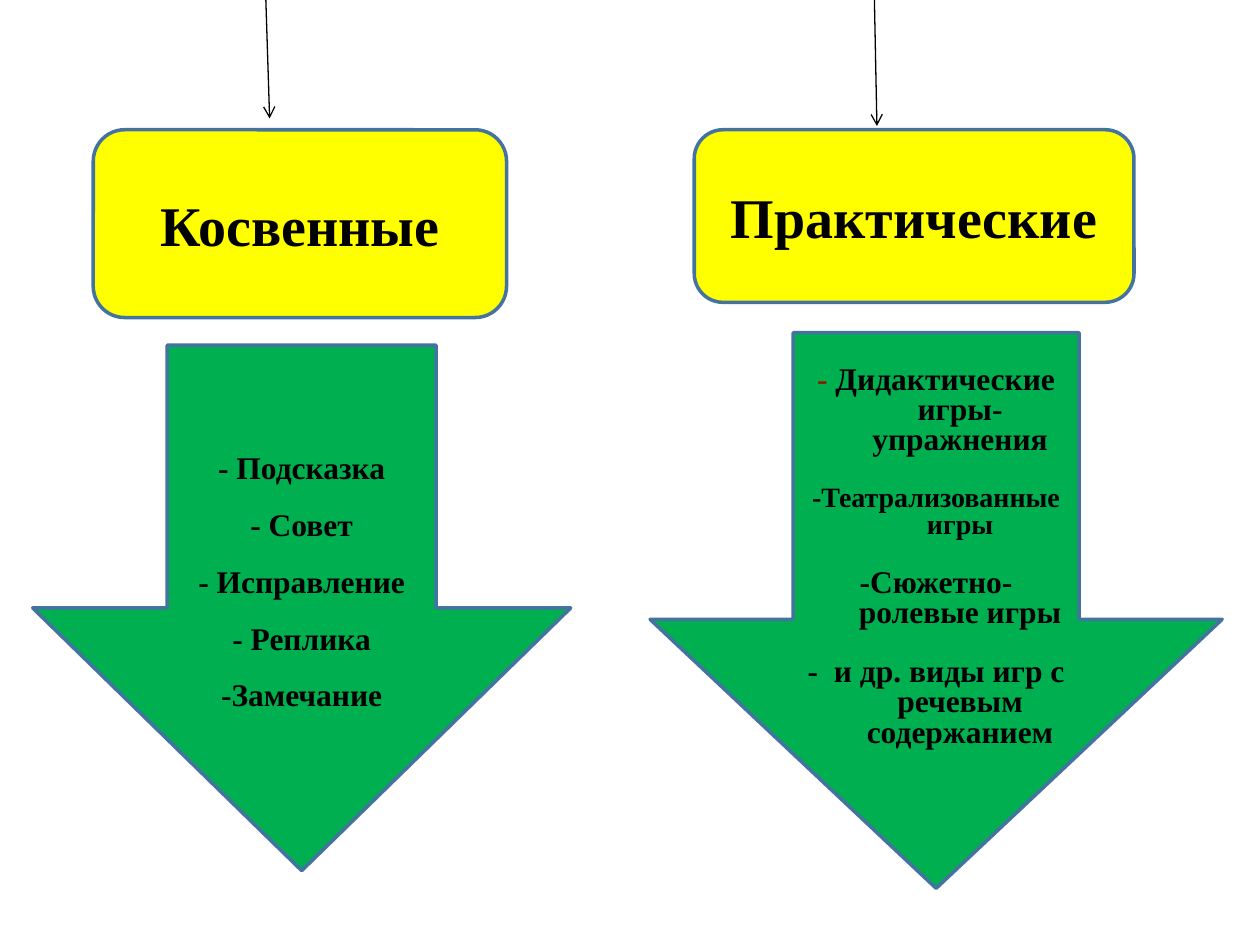
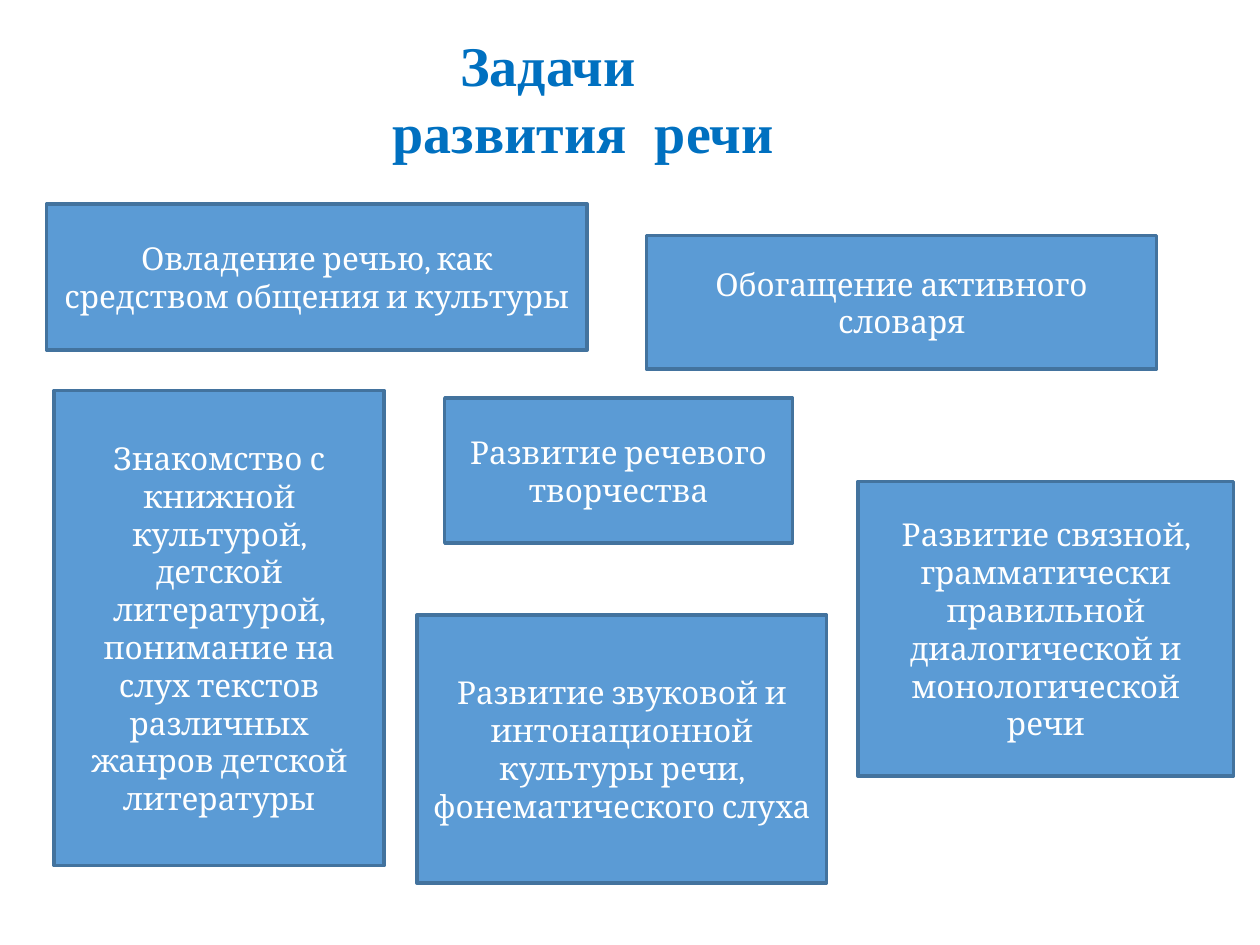
from lxml import etree
from pptx import Presentation
from pptx.dml.color import RGBColor
from pptx.enum.shapes import MSO_CONNECTOR, MSO_SHAPE
from pptx.enum.text import MSO_ANCHOR, PP_ALIGN
from pptx.oxml.ns import qn
from pptx.util import Inches, Pt

RECT = MSO_SHAPE.RECTANGLE
ROUND = MSO_SHAPE.ROUNDED_RECTANGLE
ARROW = MSO_SHAPE.DOWN_ARROW
LINE = MSO_CONNECTOR.STRAIGHT
CENTER = PP_ALIGN.CENTER
MIDDLE, TOP = MSO_ANCHOR.MIDDLE, MSO_ANCHOR.TOP

# Grid: 100 columns by 75 rows on the slide
WIDTH, HEIGHT = Inches(10), Inches(7.5)
COLS, ROWS = 100, 75

# Shared look
TIMES, CAMBRIA = "Times New Roman", "Cambria"
BLACK, WHITE = "000000", "FFFFFF"
GREEN, YELLOW, BLUE = "00B050", "FFFF00", "5B9BD5"
EDGE, TITLE, DASH = "43739E", "0070C0", "881F02"
HANG = Inches(0.38)
GAP = 16.6  # one empty line of 18 pt text at 80 % spacing


def color(code):
    return RGBColor.from_string(code)


def grid(col, row):
    return round(WIDTH * col / COLS), round(HEIGHT * row / ROWS)


def write(frame, lines, size=18, font=TIMES, ink=BLACK, bold=True,
          anchor=MIDDLE, space=None, hang=False, gap=0):
    """Fill a frame; a line is text or a list of (text, format) runs."""
    frame.word_wrap = True
    frame.vertical_anchor = anchor
    for i, line in enumerate(lines):
        para = frame.add_paragraph() if i else frame.paragraphs[0]
        para.alignment = CENTER
        if space:
            para.line_spacing = space
        if i and gap:
            para.space_before = Pt(gap)
        if hang:
            indent(para, HANG, -HANG)
        for text, own in [(line, {})] if isinstance(line, str) else line:
            run = para.add_run()
            run.text = text
            run.font.name = font
            run.font.bold = bold
            run.font.size = Pt(own.get("size", size))
            run.font.color.rgb = color(own.get("ink", ink))


def indent(para, left, first=0):
    props = para._p.get_or_add_pPr()
    props.set("marL", str(int(left)))
    props.set("indent", str(int(first)))


def block(slide, kind, place, fill, lines, **look):
    left, top, width, height = place
    shape = slide.shapes.add_shape(kind, *grid(left, top), *grid(width, height))
    shape.shadow.inherit = False
    shape.fill.solid()
    shape.fill.fore_color.rgb = color(fill)
    shape.line.color.rgb = color(EDGE)
    shape.line.width = Pt(2)
    write(shape.text_frame, lines, **look)
    return shape


def pointer(slide, start, end):
    link = slide.shapes.add_connector(LINE, *grid(*start), *grid(*end))
    link.line.color.rgb = color(BLACK)
    link.line.width = Pt(0.75)
    etree.SubElement(link.line._get_or_add_ln(), qn("a:tailEnd"), type="arrow")
    etree.SubElement(link._element.spPr, qn("a:effectLst"))


def heading(slide, place, lines):
    left, top, width, height = place
    box = slide.shapes.add_textbox(*grid(left, top), *grid(width, height))
    write(box.text_frame, lines, size=32, ink=TITLE, anchor=TOP)
    return box.text_frame


def methods(slide):
    # Green arrows with the lists; the top inset lowers the text
    hints = ["- Подсказка", "- Совет", "- Исправление", "- Реплика", "-Замечание"]
    left = block(slide, ARROW, (2.6, 27.4, 42.7, 41.7), GREEN, hints,
                 space=1.5, hang=True)
    left.text_frame.margin_top = Inches(0.51)

    games = [
        [("- ", {"ink": DASH}), ("Дидактические игры-упражнения", {})],
        [("-Театрализованные игры", {"size": 16})],
        "-Сюжетно-ролевые игры",
        "-  и др. виды игр с речевым содержанием",
    ]
    right = block(slide, ARROW, (51.6, 26.4, 45.4, 44.1), GREEN, games,
                  space=0.8, hang=True, gap=GAP)
    right.adjustments[1] = 0.484
    right.text_frame.margin_top = Inches(0.28)

    # Yellow headers
    block(slide, ROUND, (7.4, 10.3, 32.8, 14.9), YELLOW, ["Косвенные"], size=32)
    block(slide, ROUND, (55.1, 10.3, 34.9, 13.7), YELLOW, ["Практические"], size=32)

    # Arrows from the top edge
    pointer(slide, (69.4, 0), (69.6, 10))
    pointer(slide, (21.1, 0), (21.4, 9.4))


def tasks(slide):
    # Title, its lines set off from the centre
    frame = heading(slide, (10.7, 1.9, 67.9, 11.8), ["Задачи", "развития  речи"])
    frame.margin_right = Inches(0.33)
    indent(frame.paragraphs[1], Inches(0.56))

    # Task cards
    cards = [
        ((3.7, 16.2, 42.9, 11.6),
         "Овладение речью, как средством общения и культуры"),
        ((51.3, 18.7, 40.5, 10.6), "Обогащение активного словаря"),
        ((4.3, 31, 26.2, 37.7),
         "Знакомство с книжной культурой, детской литературой, понимание "
         "на слух текстов различных жанров детской литературы"),
        ((68.1, 38.2, 29.8, 23.4),
         "Развитие связной, грамматически правильной диалогической "
         "и монологической речи"),
        ((35.3, 31.6, 27.6, 11.5), "Развитие речевого творчества"),
        ((33.1, 48.8, 32.5, 21.3),
         "Развитие звуковой и интонационной культуры речи, "
         "фонематического слуха"),
    ]
    for place, text in cards:
        block(slide, RECT, place, BLUE, [text],
              font=CAMBRIA, ink=WHITE, bold=False)


def main():
    deck = Presentation()
    deck.slide_width, deck.slide_height = WIDTH, HEIGHT
    blank = deck.slide_layouts[6]
    for build in (methods, tasks):
        build(deck.slides.add_slide(blank))
    deck.save("out.pptx")


if __name__ == "__main__":
    main()
